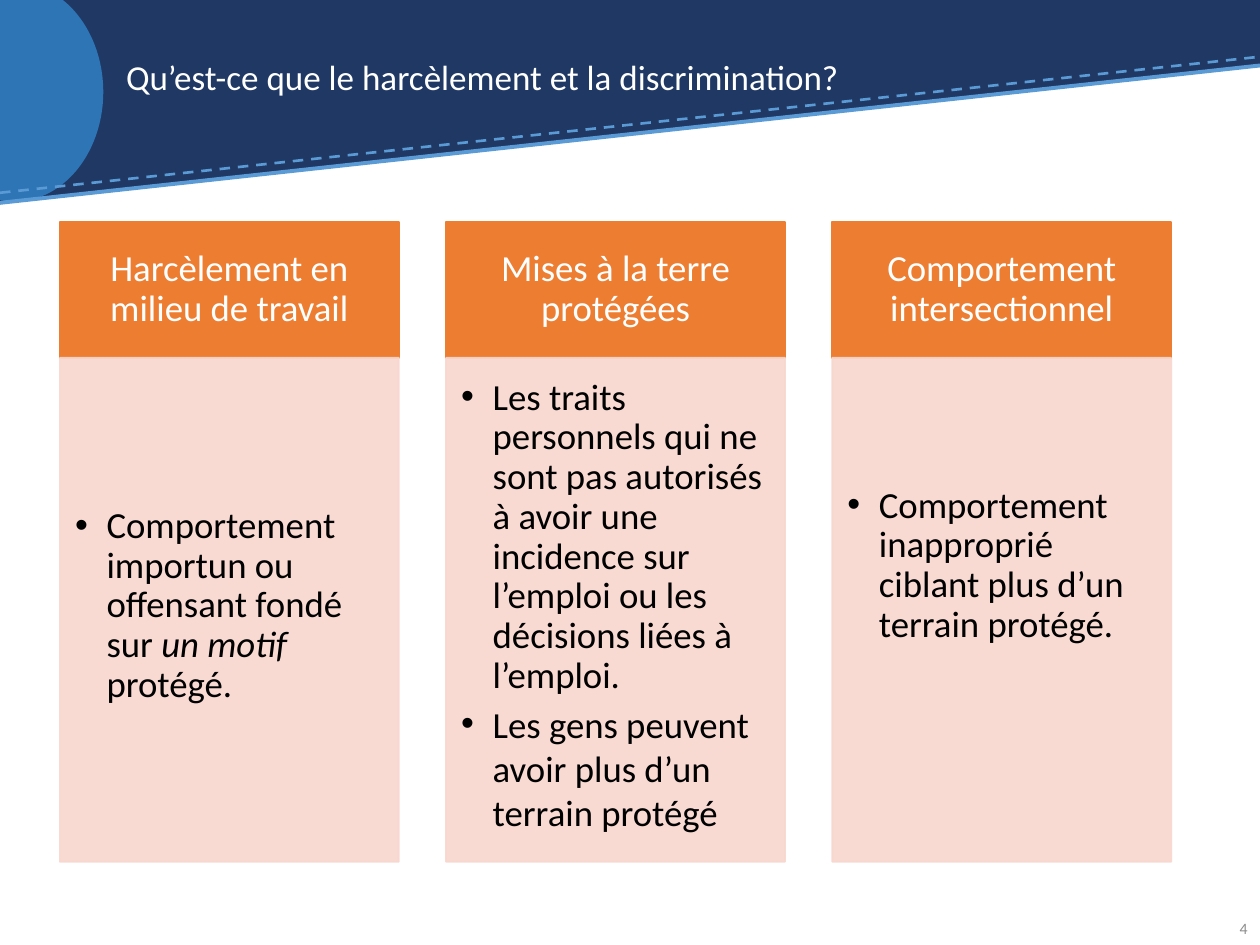
from lxml.etree import SubElement
from pptx import Presentation
from pptx.dml.color import RGBColor
from pptx.enum.dml import MSO_LINE
from pptx.enum.shapes import MSO_CONNECTOR, MSO_SHAPE
from pptx.enum.text import MSO_ANCHOR, PP_ALIGN
from pptx.oxml.ns import qn
from pptx.util import Inches, Pt

NAVY = RGBColor(0x20, 0x38, 0x64)
BLUE = RGBColor(0x2E, 0x75, 0xB6)
SKY = RGBColor(0x5B, 0x9B, 0xD5)
ORANGE = RGBColor(0xED, 0x7D, 0x31)
PEACH = RGBColor(0xF8, 0xD7, 0xCE)
GREY = RGBColor(0x8C, 0x8C, 0x8C)
WHITE = RGBColor(0xFF, 0xFF, 0xFF)
BLACK = RGBColor(0x00, 0x00, 0x00)


def add_block(shape, x, y, w, h, color, outlined=False):
    sp = s.shapes.add_shape(shape, Inches(x), Inches(y), Inches(w), Inches(h))
    sp.shadow.inherit = False
    sp.fill.solid()
    sp.fill.fore_color.rgb = color
    if outlined:
        sp.line.color.rgb = color
        sp.line.width = Pt(1)
    else:
        sp.line.fill.background()
    return sp


def add_run(p, text, size, color, italic=False):
    r = p.add_run()
    r.text = text
    r.font.name = "Calibri"
    r.font.size = Pt(size)
    r.font.color.rgb = color
    r.font.italic = italic


prs = Presentation()
prs.slide_width = Inches(10)
prs.slide_height = Inches(7.5)
s = prs.slides.add_slide(prs.slide_layouts[5])

add_block(MSO_SHAPE.RECTANGLE, 0, 0, 10, 0.52, NAVY)
wedge = add_block(MSO_SHAPE.RIGHT_TRIANGLE, 0, 0.51, 10, 1.09, NAVY)
wedge.element.spPr.get_or_add_xfrm().set("flipV", "1")
add_block(MSO_SHAPE.OVAL, -0.59, -0.14, 1.41, 1.74, BLUE)

for y1, y2, width, dash in [(1.53, 0.45, 1.5, MSO_LINE.DASH), (1.61, 0.52, 2.25, MSO_LINE.SOLID)]:
    line = s.shapes.add_connector(MSO_CONNECTOR.STRAIGHT, 0, Inches(y1), Inches(10), Inches(y2))
    line.line.color.rgb = SKY
    line.line.width = Pt(width)
    line.line.dash_style = dash
    SubElement(line.element.spPr, qn("a:effectLst"))

title = s.shapes.title
title.element.getparent().append(title.element)
title.left, title.top, title.width, title.height = Inches(0.9), Inches(0.2), Inches(8.05), Inches(0.86)
tf = title.text_frame
tf.word_wrap = True
tf.vertical_anchor = MSO_ANCHOR.MIDDLE
p = tf.paragraphs[0]
p.alignment = PP_ALIGN.LEFT
p.line_spacing = 0.9
add_run(p, "Qu’est-ce que le harcèlement et la discrimination?", 20, WHITE)

columns = [
    ("Harcèlement en milieu de travail", 0.18, [
        (0.9, [("Comportement importun ou offensant fondé sur ", False),
               ("un motif ", True), ("protégé.", False)])]),
    ("Mises à la terre protégées", 0.18, [
        (0.9, [("Les traits personnels qui ne sont pas autorisés à avoir une incidence "
                "sur l’emploi ou les décisions liées à l’emploi.", False)]),
        (1.0, [("Les gens peuvent avoir plus d’un terrain protégé", False)])]),
    ("Comportement intersectionnel", 0.82, [
        (0.9, [("Comportement inapproprié ciblant plus d’un terrain protégé.", False)])]),
]

for i, (heading, bottom, bullets) in enumerate(columns):
    x = 0.475 + i * 3.065
    head = add_block(MSO_SHAPE.RECTANGLE, x, 1.76, 2.69, 1.08, ORANGE, True)
    tf = head.text_frame
    tf.word_wrap = True
    tf.vertical_anchor = MSO_ANCHOR.MIDDLE
    tf.margin_left = tf.margin_right = Inches(0.16)
    tf.margin_top = tf.margin_bottom = Inches(0.09)
    p = tf.paragraphs[0]
    p.alignment = PP_ALIGN.CENTER
    p.line_spacing = 0.9
    add_run(p, heading, 21, WHITE)

    body = add_block(MSO_SHAPE.RECTANGLE, x, 2.84, 2.69, 4, PEACH, True)
    for clr in body.element.spPr.iter(qn("a:srgbClr")):
        SubElement(clr, qn("a:alpha"), val="90000")
    tf = body.text_frame
    tf.word_wrap = True
    tf.vertical_anchor = MSO_ANCHOR.MIDDLE
    tf.margin_left = tf.margin_top = Inches(0.12)
    tf.margin_right = Inches(0.16)
    tf.margin_bottom = Inches(bottom)
    for n, (spacing, runs) in enumerate(bullets):
        p = tf.add_paragraph() if n else tf.paragraphs[0]
        p.alignment = PP_ALIGN.LEFT
        p.line_spacing = spacing
        p.space_after = Pt(3)
        pPr = p._p.get_or_add_pPr()
        pPr.set("marL", str(Inches(0.25)))
        pPr.set("indent", str(Inches(-0.25)))
        SubElement(pPr, qn("a:buFont"), typeface="Arial")
        SubElement(pPr, qn("a:buChar"), char="•")
        for text, italic in runs:
            add_run(p, text, 21, BLACK, italic)

number = s.shapes.add_textbox(Inches(9.47), Inches(7.17), Inches(0.53), Inches(0.4))
tf = number.text_frame
tf.word_wrap = True
tf.vertical_anchor = MSO_ANCHOR.MIDDLE
p = tf.paragraphs[0]
p.alignment = PP_ALIGN.RIGHT
p.space_after = Pt(6)
add_run(p, "4", 9, GREY)

prs.save("out.pptx")
